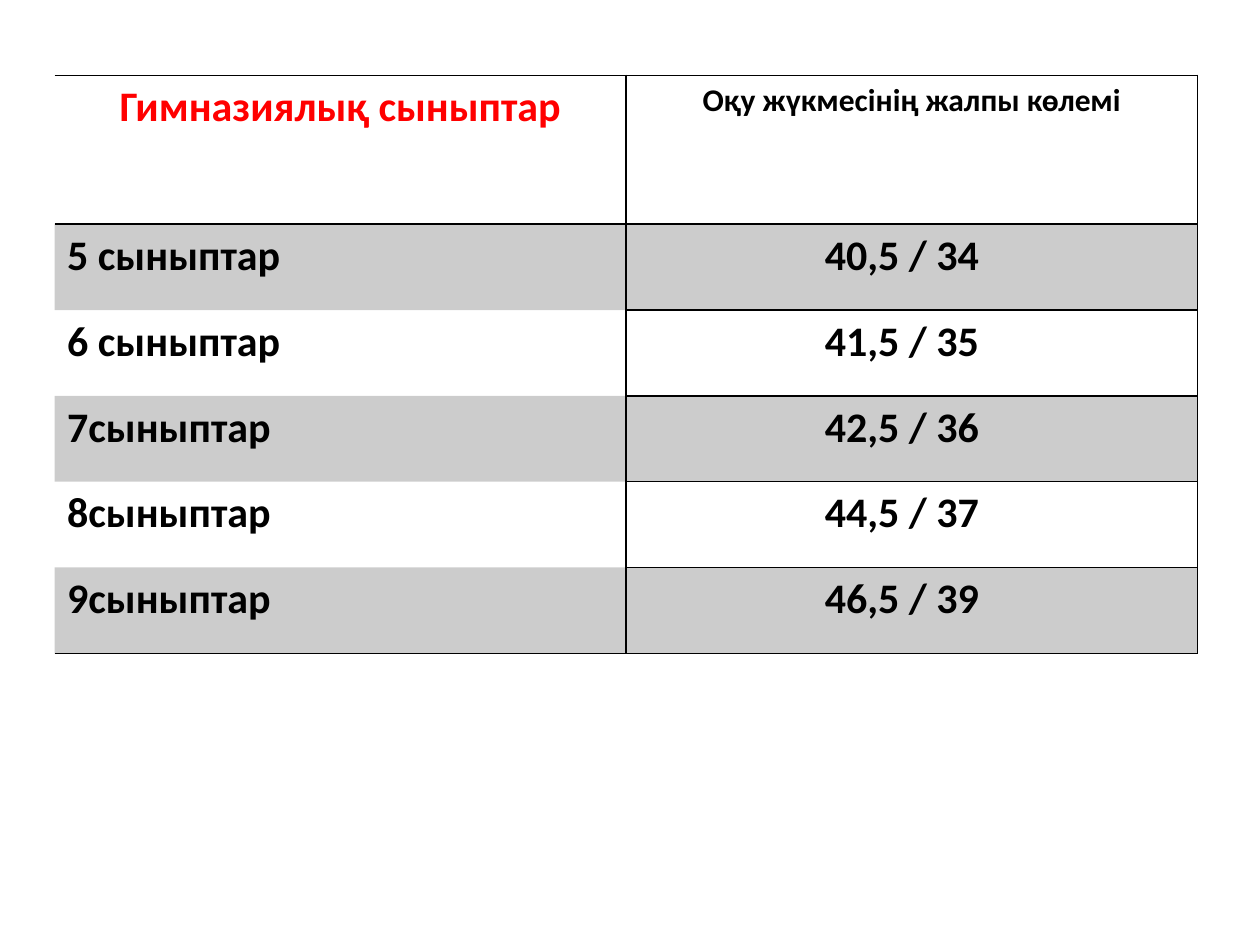
"""Build a slide with a table of study load by gymnasium grade."""
from lxml.etree import SubElement
from pptx import Presentation
from pptx.dml.color import RGBColor
from pptx.enum.text import PP_ALIGN as Align
from pptx.oxml.ns import qn
from pptx.util import Cm, Pt

HEADER = ("Гимназиялық сыныптар", "Оқу жүкмесінің жалпы көлемі")
LOADS = [
    ("5 сыныптар", "40,5 / 34"),
    ("6 сыныптар", "41,5 / 35"),
    ("7сыныптар", "42,5 / 36"),
    ("8сыныптар", "44,5 / 37"),
    ("9сыныптар", "46,5 / 39"),
]
ROWS = [HEADER, *LOADS]
COLORS = {"title": "FF0000", "text": "000000", "line": "000000", "band": "000000"}
FONT = "Calibri"
BAND_OPACITY = 20
PLAIN_TABLE_STYLE = "{2D5ABB26-0587-4C30-8999-92F81FD0307C}"
LEFT, TOP = Cm(1.1), Cm(1.52)
COLUMN_WIDTH = Cm(11.52)
HEADER_HEIGHT, ROW_HEIGHT = Cm(3), Cm(1.73)


def add_borders(cell, sides):
    properties = cell._tc.get_or_add_tcPr()
    for side in "LRTB":
        line = SubElement(properties, qn(f"a:ln{side}"), w=str(Pt(1)))
        if side in sides:
            fill = SubElement(line, qn("a:solidFill"))
            SubElement(fill, qn("a:srgbClr"), val=COLORS["line"])
        else:
            SubElement(line, qn("a:noFill"))


def fill_cell(cell, banded):
    if not banded:
        cell.fill.background()
        return
    cell.fill.solid()
    cell.fill.fore_color.rgb = RGBColor.from_string(COLORS["band"])
    color = cell._tc.tcPr.find(qn("a:solidFill")).find(qn("a:srgbClr"))
    SubElement(color, qn("a:alpha"), val=str(BAND_OPACITY * 1000))


def write_cell(cell, text, size, color, alignment):
    cell.text_frame.text = text
    paragraph = cell.text_frame.paragraphs[0]
    paragraph.alignment = alignment
    font = paragraph.runs[0].font
    font.name, font.size, font.bold = FONT, Pt(size), True
    font.color.rgb = RGBColor.from_string(color)


def border_sides(row, column):
    if column == 1:
        return "LRTB"
    return "R" + ("T" if row <= 1 else "") + ("B" if row in (0, len(LOADS)) else "")


def main():
    presentation = Presentation()
    presentation.slide_width, presentation.slide_height = Cm(25.4), Cm(19.05)
    slide = presentation.slides.add_slide(presentation.slide_layouts[6])
    frame = slide.shapes.add_table(
        len(ROWS), len(HEADER), LEFT, TOP,
        COLUMN_WIDTH * len(HEADER), HEADER_HEIGHT + ROW_HEIGHT * len(LOADS))
    table = frame.table
    table._tbl.tblPr.find(qn("a:tableStyleId")).text = PLAIN_TABLE_STYLE
    for column in table.columns:
        column.width = COLUMN_WIDTH
    for row, texts in enumerate(ROWS):
        table.rows[row].height = ROW_HEIGHT if row else HEADER_HEIGHT
        for column, text in enumerate(texts):
            cell = table.cell(row, column)
            is_title = row == 0 and column == 0
            size = 18 if row == 0 and column == 1 else 24
            color = COLORS["title" if is_title else "text"]
            alignment = Align.LEFT if row and column == 0 else Align.CENTER
            write_cell(cell, text, size, color, alignment)
            if row and column:
                cell.margin_right = Cm(0.65)
            add_borders(cell, border_sides(row, column))
            fill_cell(cell, banded=row % 2 == 1)
    presentation.save("out.pptx")


if __name__ == "__main__":
    main()
